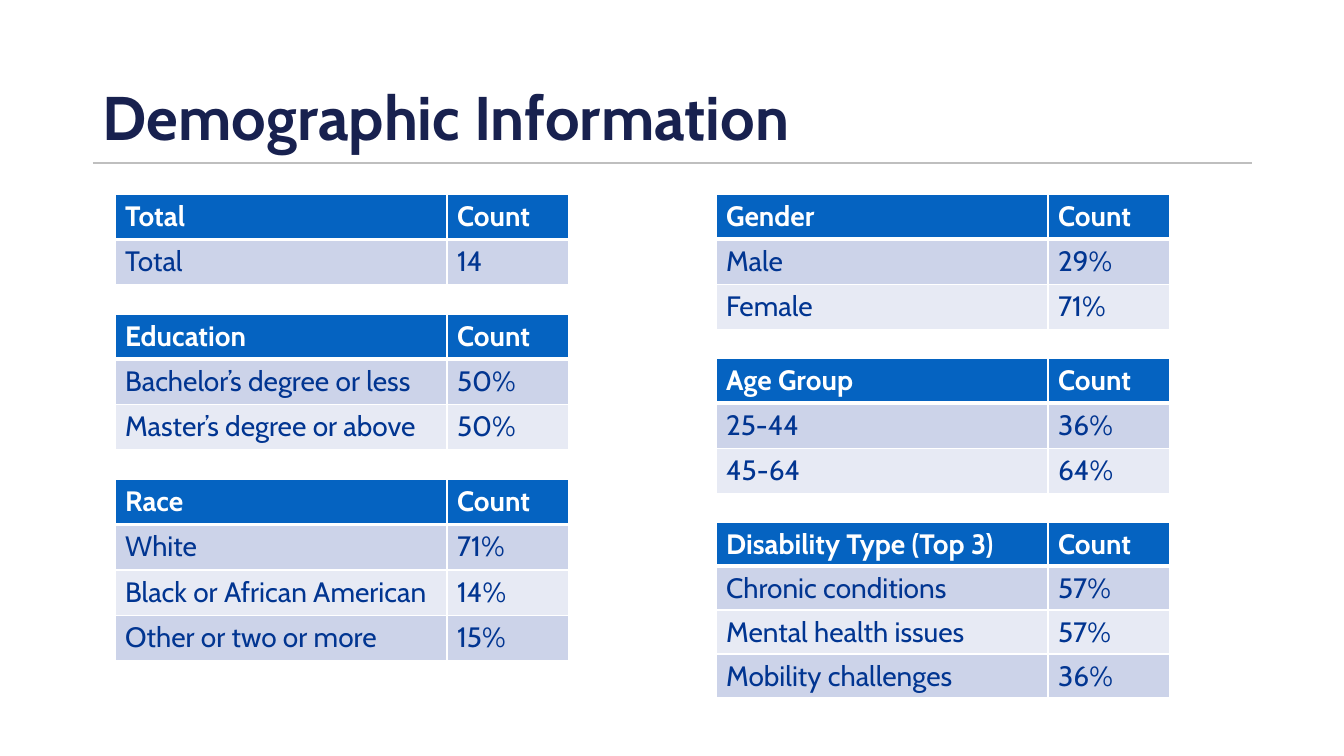
from lxml.etree import SubElement
from pptx import Presentation
from pptx.dml.color import RGBColor
from pptx.enum.shapes import MSO_CONNECTOR
from pptx.enum.text import MSO_ANCHOR
from pptx.oxml.ns import qn
from pptx.util import Pt

# Content: each table has top, height, heading and its rows
TITLE = "Demographic Information"
COLUMNS = {
    115: [
        (194, 91, "Total", [("Total", "14")]),
        (314, 136, "Education", [
            ("Bachelor’s degree or less", "50%"),
            ("Master’s degree or above", "50%"),
        ]),
        (479, 182, "Race", [
            ("White", "71%"),
            ("Black or African American", "14%"),
            ("Other or two or more", "15%"),
        ]),
    ],
    716: [
        (194, 136, "Gender", [("Male", "29%"), ("Female", "71%")]),
        (358, 136, "Age Group", [("25-44", "36%"), ("45-64", "64%")]),
        (522, 176, "Disability Type (Top 3)", [
            ("Chronic conditions", "57%"),
            ("Mental health issues", "57%"),
            ("Mobility challenges", "36%"),
        ]),
    ],
}
COLUMN_WIDTHS = (332, 122)

THEME = {
    "font": "Cabin",
    "title": {"size": 44, "color": "18214F", "bold": True},
    "header": {"size": 20, "color": "FFFFFF", "bold": True},
    "body": {"size": 20, "color": "013591", "bold": False},
    "header_fill": "0563C1",
    "band_fills": ("CCD3E9", "E7EAF4"),
    "border": "FFFFFF",
    "rule": "BFBFBF",
    "thin": 1,
    "thick": 3,
}
EMU_PER_PX = 914400 / 100.8


def px(length):
    return round(length * EMU_PER_PX)


def write(text_frame, text, style):
    paragraph = text_frame.paragraphs[0]
    run = paragraph.add_run()
    run.text = text
    formats = {"name": THEME["font"], "size": Pt(style["size"]), "bold": style["bold"]}
    for name, value in formats.items():
        setattr(run.font, name, value)
    run.font.color.rgb = RGBColor.from_string(style["color"])
    return paragraph


def set_borders(cell, widths):
    properties = cell._tc.get_or_add_tcPr()
    for side, width in widths.items():
        line = SubElement(properties, qn(f"a:ln{side}"), w=str(Pt(width)))
        fill = SubElement(line, qn("a:solidFill"))
        SubElement(fill, qn("a:srgbClr"), val=THEME["border"])


def add_count_table(slide, left, top, height, heading, rows):
    records = [(heading, "Count"), *rows]
    frame = slide.shapes.add_table(
        len(records), len(COLUMN_WIDTHS),
        px(left), px(top), px(sum(COLUMN_WIDTHS)), px(height),
    )
    table = frame.table
    for column, width in zip(table.columns, COLUMN_WIDTHS):
        column.width = px(width)
    for index, record in enumerate(records):
        table.rows[index].height = px(height / len(records))
        is_header = index == 0
        fill = THEME["header_fill"] if is_header else THEME["band_fills"][(index - 1) % 2]
        # The thick line is shared by the header and the first body row
        widths = dict.fromkeys("LRTB", THEME["thin"])
        if index < 2:
            widths["B" if is_header else "T"] = THEME["thick"]
        for cell, text in zip(table.rows[index].cells, record):
            write(cell.text_frame, text, THEME["header" if is_header else "body"])
            set_borders(cell, widths)
            cell.fill.solid()
            cell.fill.fore_color.rgb = RGBColor.from_string(fill)


def add_title(slide):
    # Rule under the title
    rule = slide.shapes.add_connector(
        MSO_CONNECTOR.STRAIGHT, px(93), px(163), px(1252), px(163))
    rule.line.color.rgb = RGBColor.from_string(THEME["rule"])
    rule.line.width = Pt(THEME["thin"])
    SubElement(rule._element.spPr, qn("a:effectLst"))

    # Title text
    box = slide.shapes.add_textbox(px(93), px(64), px(1161), px(95))
    box.text_frame.word_wrap = True
    box.text_frame.vertical_anchor = MSO_ANCHOR.BOTTOM
    write(box.text_frame, TITLE, THEME["title"]).line_spacing = 0.9


def main():
    presentation = Presentation()
    presentation.slide_width, presentation.slide_height = px(1344), px(756)
    slide = presentation.slides.add_slide(presentation.slide_layouts[6])
    add_title(slide)
    for left, tables in COLUMNS.items():
        for table in tables:
            add_count_table(slide, left, *table)
    presentation.save("out.pptx")


if __name__ == "__main__":
    main()
